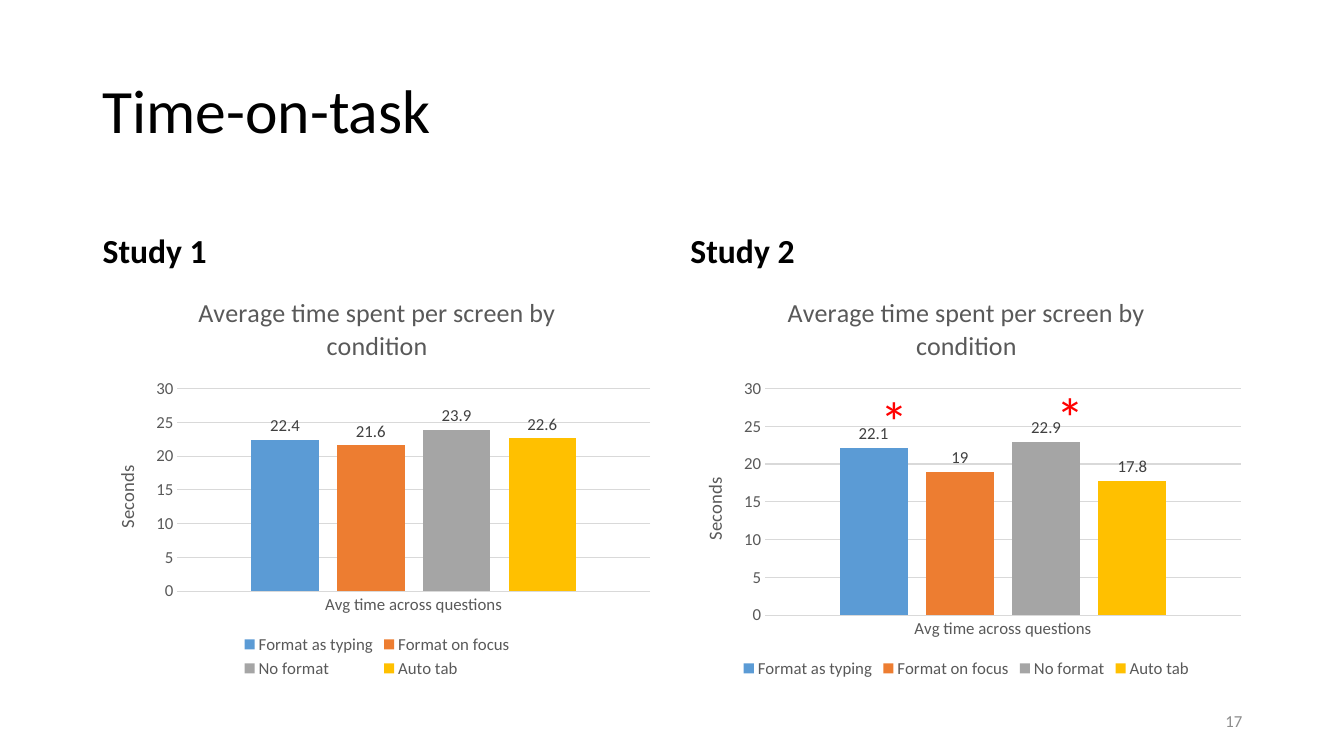
"""Builds the Time-on-task slide with one column chart per study."""
from pptx import Presentation
from pptx.chart.data import CategoryChartData
from pptx.dml.color import RGBColor
from pptx.enum.chart import XL_CHART_TYPE, XL_LABEL_POSITION, XL_LEGEND_POSITION, XL_TICK_MARK
from pptx.enum.text import MSO_ANCHOR, PP_ALIGN
from pptx.util import Inches, Pt

COLUMN = XL_CHART_TYPE.COLUMN_CLUSTERED
OUTSIDE_END = XL_LABEL_POSITION.OUTSIDE_END
LEGEND_BOTTOM = XL_LEGEND_POSITION.BOTTOM
NO_TICK = XL_TICK_MARK.NONE
TOP, MIDDLE, BOTTOM = MSO_ANCHOR.TOP, MSO_ANCHOR.MIDDLE, MSO_ANCHOR.BOTTOM
LEFT, RIGHT = PP_ALIGN.LEFT, PP_ALIGN.RIGHT

FONT = "Calibri"
GREY, RULE = "595959", "D9D9D9"
CONDITIONS = [("Format as typing", "5B9BD5"), ("Format on focus", "ED7D31"),
              ("No format", "A5A5A5"), ("Auto tab", "FFC000")]
STUDIES = [("Study 1", 0.92, 5.64, [22.4, 21.6, 23.9, 22.6]),
           ("Study 2", 6.75, 5.67, [22.1, 19, 22.9, 17.8])]


def style(font, size, color, bold=False):
    """Set the face, size, colour and weight of a font."""
    font.name, font.size, font.bold = FONT, Pt(size), bold
    font.color.rgb = RGBColor.from_string(color)


def add_text(text, box, size, color, bold=False, anchor=TOP, align=LEFT, spacing=1.0):
    """Add a one-paragraph text box."""
    tf = s.shapes.add_textbox(*map(Inches, box)).text_frame
    tf.word_wrap = True
    tf.vertical_anchor = anchor
    p = tf.paragraphs[0]
    p.text = text
    p.alignment, p.line_spacing = align, spacing
    style(p.runs[0].font, size, color, bold)


prs = Presentation()
prs.slide_width, prs.slide_height = Inches(13.33), Inches(7.5)
s = prs.slides.add_slide(prs.slide_layouts[6])

add_text("Time-on-task", (0.92, 0.4, 11.5, 1.45), 44, "000000", anchor=MIDDLE, spacing=0.9)

for study, left, width, seconds in STUDIES:
    add_text(study, (left, 1.84, width, 0.9), 24, "000000", True, BOTTOM, spacing=0.9)

    data = CategoryChartData()
    data.categories = ["Avg time across questions"]
    for (condition, _), value in zip(CONDITIONS, seconds):
        data.add_series(condition, [value])
    chart = s.shapes.add_chart(COLUMN, Inches(left), Inches(2.74),
                               Inches(width), Inches(4.03), data).chart
    style(chart.font, 10, "000000")

    chart.has_title = True
    tf = chart.chart_title.text_frame
    tf.text = "Average time spent per screen by condition"
    style(tf.paragraphs[0].runs[0].font, 18.6, GREY)
    chart.chart_title.include_in_layout = False

    chart.has_legend = True
    chart.legend.position = LEGEND_BOTTOM
    chart.legend.include_in_layout = False
    style(chart.legend.font, 12, GREY)

    category_axis, value_axis = chart.category_axis, chart.value_axis
    for axis in (category_axis, value_axis):
        axis.major_tick_mark = axis.minor_tick_mark = NO_TICK
        style(axis.tick_labels.font, 12, GREY)
    value_axis.minimum_scale, value_axis.maximum_scale = 0, 30
    value_axis.major_unit = 5
    value_axis.format.line.fill.background()
    for line in (category_axis.format.line, value_axis.major_gridlines.format.line):
        line.color.rgb = RGBColor.from_string(RULE)
        line.width = Pt(0.75)
    tf = value_axis.axis_title.text_frame
    tf.text = "Seconds"
    style(tf.paragraphs[0].runs[0].font, 13.3, GREY)

    plot = chart.plots[0]
    plot.gap_width, plot.overlap, plot.vary_by_categories = 219, -27, False
    for series, (_, color) in zip(plot.series, CONDITIONS):
        series.format.fill.solid()
        series.format.fill.fore_color.rgb = RGBColor.from_string(color)
        labels = series.data_labels
        labels.show_value = True
        labels.position = OUTSIDE_END
        style(labels.font, 12, "404040")

add_text("17", (9.42, 6.95, 3, 0.4), 12, "8C8C8C", anchor=MIDDLE, align=RIGHT)
for left, top in ((10.38, 3.75), (8.63, 3.79)):
    add_text("*", (left, top, 0.49, 0.77), 40, "FF0000")

prs.save("out.pptx")
